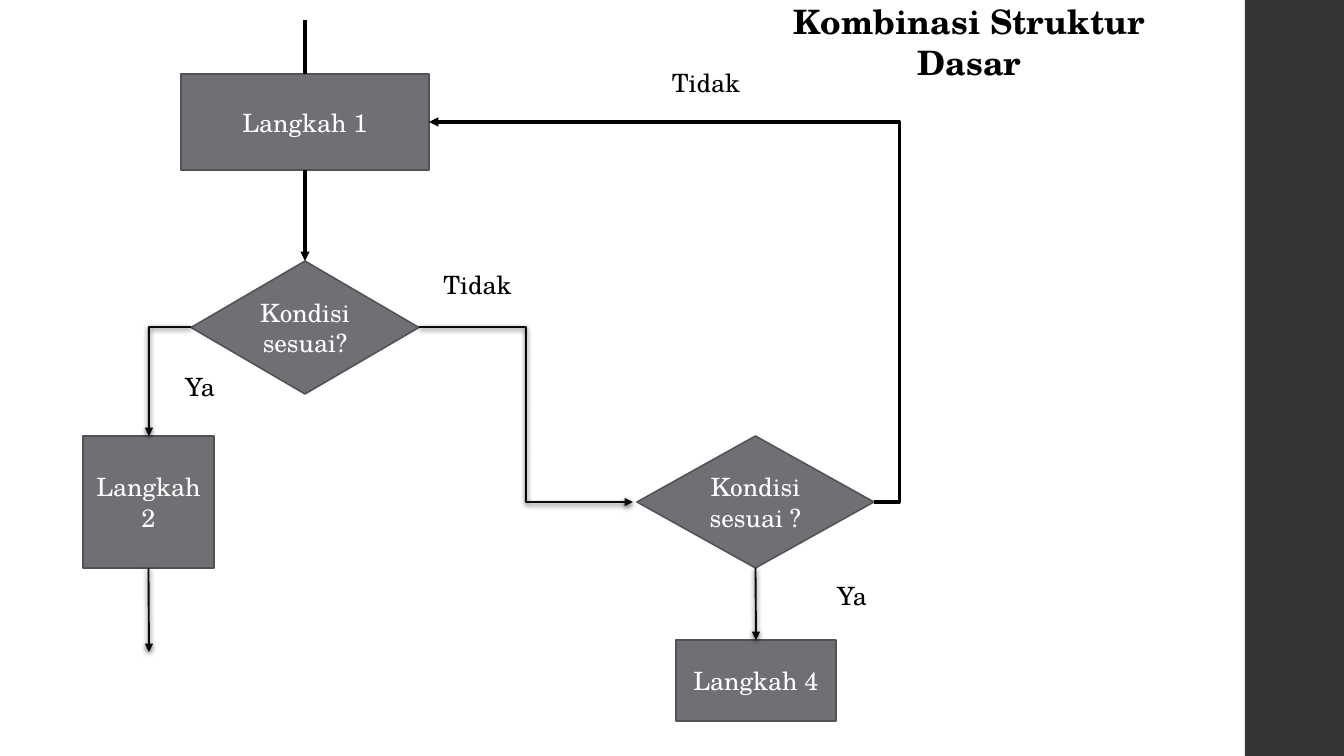
from lxml import etree
from pptx import Presentation
from pptx.dml.color import RGBColor
from pptx.enum.shapes import MSO_CONNECTOR, MSO_SHAPE
from pptx.enum.text import MSO_ANCHOR, MSO_AUTO_SIZE, PP_ALIGN
from pptx.oxml.ns import qn
from pptx.util import Pt

PX = 914400 / 100.8
RECT, DIAMOND = MSO_SHAPE.RECTANGLE, MSO_SHAPE.DIAMOND
STRAIGHT, ELBOW = MSO_CONNECTOR.STRAIGHT, MSO_CONNECTOR.ELBOW
CENTER, MIDDLE = PP_ALIGN.CENTER, MSO_ANCHOR.MIDDLE
TOP, BOTTOM = 0, 2
THEME = {
    "font": "TeX Gyre Schola",
    "title": Pt(24),
    "body": Pt(18),
    "ink": RGBColor(0x00, 0x00, 0x00),
    "paper": RGBColor(0xFF, 0xFF, 0xFF),
    "step": RGBColor(0x6F, 0x6F, 0x74),
    "step_edge": RGBColor(0x52, 0x52, 0x56),
    "sidebar": RGBColor(0x35, 0x35, 0x37),
    "edge": Pt(1.1),
    "thin": Pt(1.35),
    "thick": Pt(2.25),
}


def px(*lengths):
    return [round(length * PX) for length in lengths]


def write(frame, text, size, color, bold=False):
    frame.text = text
    frame.word_wrap = True
    frame.auto_size = MSO_AUTO_SIZE.NONE
    frame.vertical_anchor = MIDDLE
    paragraph = frame.paragraphs[0]
    paragraph.alignment = CENTER
    for run in paragraph.runs:
        run.font.name = THEME["font"]
        run.font.size = size
        run.font.bold = bold
        run.font.color.rgb = color


deck = Presentation()
deck.slide_width, deck.slide_height = px(1344, 756)
slide = deck.slides.add_slide(deck.slide_layouts[5])
shapes = slide.shapes

heading = shapes.title
heading.left, heading.top, heading.width, heading.height = px(771, 7, 397, 69)
write(heading.text_frame, "Kombinasi Struktur Dasar", THEME["title"], THEME["ink"], True)

sidebar = shapes.add_shape(RECT, *px(1245, 0, 99, 756))
sidebar.shadow.inherit = False
sidebar.fill.solid()
sidebar.fill.fore_color.rgb = THEME["sidebar"]
sidebar.line.fill.background()

steps = {}
for key, outline, text, box in [
    ("step 1", RECT, "Langkah 1", (181, 74, 248, 96)),
    ("check 1", DIAMOND, "Kondisi sesuai?", (191, 261, 228, 133)),
    ("step 2", RECT, "Langkah\v2", (83, 436, 131, 132)),
    ("check 2", DIAMOND, "Kondisi sesuai ?", (637, 436, 237, 132)),
    ("step 4", RECT, "Langkah 4", (676, 640, 160, 81)),
]:
    step = shapes.add_shape(outline, *px(*box))
    step.shadow.inherit = False
    step.fill.solid()
    step.fill.fore_color.rgb = THEME["step"]
    step.line.color.rgb = THEME["step_edge"]
    step.line.width = THEME["edge"]
    write(step.text_frame, text, THEME["body"], THEME["paper"])
    steps[key] = step

for text, box in [
    ("Ya", (163, 371, 74, 31)),
    ("Tidak", (417, 262, 121, 44)),
    ("Tidak", (633, 56, 146, 52)),
    ("Ya", (771, 575, 162, 40)),
]:
    answer = shapes.add_textbox(*px(*box))
    write(answer.text_frame, text, THEME["body"], THEME["ink"])

for kind, ends, source, target, weight, arrow, soft, bend in [
    (STRAIGHT, (305, 20, 305, 74), None, "step 1", "thick", False, False, None),
    (STRAIGHT, (305, 170, 305, 261), "step 1", "check 1", "thick", True, False, None),
    (STRAIGHT, (149, 568, 149, 652), "step 2", None, "thin", True, True, None),
    (STRAIGHT, (755, 568, 756, 640), "check 2", "step 4", "thin", True, True, None),
    (ELBOW, (191, 327, 149, 436), None, None, "thin", True, True, "corner"),
    (ELBOW, (419, 327, 633, 502), None, None, "thin", True, True, None),
    (ELBOW, (874, 502, 429, 122), None, None, "thick", True, False, "val -5700"),
]:
    flow = shapes.add_connector(kind, *px(*ends))
    if source:
        flow.begin_connect(steps[source], BOTTOM)
    if target:
        flow.end_connect(steps[target], TOP)
    flow.line.width = THEME[weight]
    flow.line.color.rgb = THEME["ink"]
    properties = flow.element.spPr
    geometry = properties.find(qn("a:prstGeom"))
    if bend == "corner":
        geometry.set("prst", "bentConnector2")
    elif bend:
        guides = geometry.find(qn("a:avLst"))
        etree.SubElement(guides, qn("a:gd"), name="adj1", fmla=bend)
    stroke = properties.find(qn("a:ln"))
    if arrow:
        etree.SubElement(stroke, qn("a:tailEnd"), type="triangle")
    effects = etree.SubElement(properties, qn("a:effectLst"))
    if soft:
        ink = stroke.find(qn("a:solidFill")).find(qn("a:srgbClr"))
        etree.SubElement(ink, qn("a:alpha"), val="95000")
        shade = etree.SubElement(
            effects, qn("a:outerShdw"), blurRad=str(Pt(4)), dist=str(Pt(1.2)),
            dir="5400000", rotWithShape="0",
        )
        tint = etree.SubElement(shade, qn("a:srgbClr"), val=str(THEME["ink"]))
        etree.SubElement(tint, qn("a:alpha"), val="75000")

deck.save("out.pptx")
